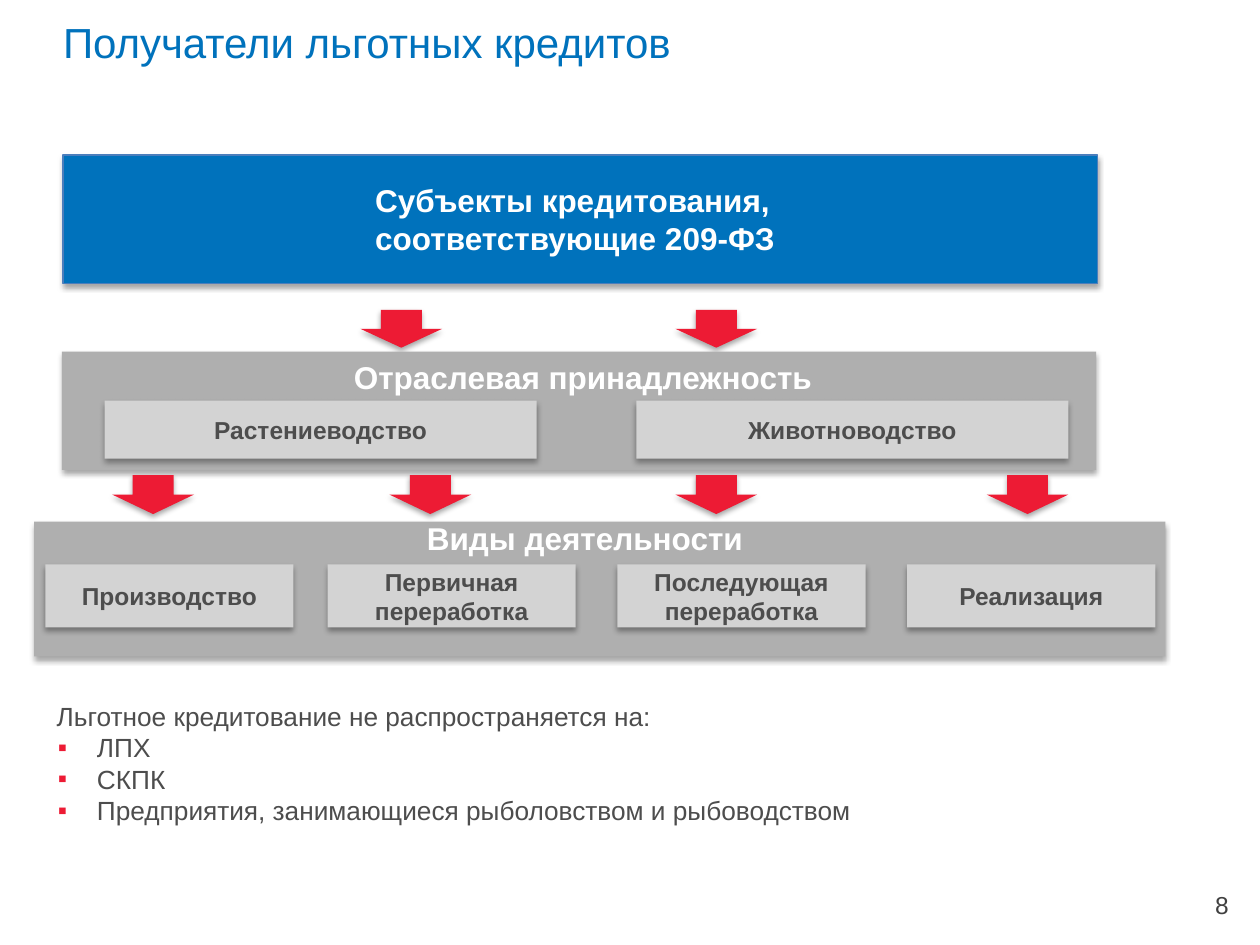
from dataclasses import dataclass

from lxml import etree
from pptx import Presentation, util as u
from pptx.dml.color import RGBColor
from pptx.enum import shapes, text
from pptx.oxml.ns import qn


@dataclass(frozen=True)
class Theme:
    """Colours, type sizes and font of the slide."""
    blue: str = "0072BC"
    edge: str = "4B7EBC"
    red: str = "ED1B34"
    band: str = "AFAFAF"
    card: str = "D3D3D3"
    ink: str = "4D4D4D"
    dark: str = "404040"
    white: str = "FFFFFF"
    font: str = "Arial"
    title: int = 24
    head: int = 18
    body: int = 15
    small: int = 14


T = Theme()
COLS, ROWS = 100, 75
WIDE, HIGH = u.Inches(10), u.Inches(7.5)
RECT = shapes.MSO_SHAPE.RECTANGLE
ARROW = shapes.MSO_SHAPE.DOWN_ARROW
LEFT, MID, RIGHT = text.PP_ALIGN.LEFT, text.PP_ALIGN.CENTER, text.PP_ALIGN.RIGHT
TOP, CORE = text.MSO_ANCHOR.TOP, text.MSO_ANCHOR.MIDDLE


def area(x, y, w, h):
    """Turn grid columns and rows into slide lengths."""
    return (round(x * WIDE / COLS), round(y * HIGH / ROWS),
            round(w * WIDE / COLS), round(h * HIGH / ROWS))


def place(item, *cell):
    """Move a placeholder to a grid cell."""
    item.left, item.top, item.width, item.height = area(*cell)


def pad(frame, side, edge):
    """Set the side and edge insets of a text frame in inches."""
    frame.margin_left = frame.margin_right = u.Inches(side)
    frame.margin_top = frame.margin_bottom = u.Inches(edge)


def write(frame, words, size, color, bold=False, align=LEFT, anchor=TOP):
    """Fill a text frame and format all its runs."""
    frame.text = words
    frame.vertical_anchor = anchor
    for para in frame.paragraphs:
        para.alignment = align
        for run in para.runs:
            font = run.font
            font.name, font.size, font.bold = T.font, u.Pt(size), bold
            font.color.rgb = RGBColor.from_string(color)


def shade(shape):
    """Give a shape a soft shadow that falls straight down."""
    shape.shadow.inherit = False
    glow = etree.SubElement(
        shape._element.spPr.find(qn("a:effectLst")), qn("a:outerShdw"),
        blurRad="40000", dist="23000", dir="5400000", rotWithShape="0")
    tint = etree.SubElement(glow, qn("a:srgbClr"), val="000000")
    etree.SubElement(tint, qn("a:alpha"), val="35000")


def block(slide, kind, cell, fill, edge=None):
    """Add a filled preset shape with a shadow."""
    shape = slide.shapes.add_shape(kind, *area(*cell))
    shape.fill.solid()
    shape.fill.fore_color.rgb = RGBColor.from_string(fill)
    if edge:
        shape.line.color.rgb = RGBColor.from_string(edge)
        shape.line.width = u.Pt(0.75)
    else:
        shape.line.fill.background()
    shade(shape)
    return shape


def card(slide, words, *cell):
    """Add a light card with a centred bold label."""
    frame = block(slide, RECT, cell, T.card).text_frame
    frame.word_wrap = True
    pad(frame, 0, 0.04)
    write(frame, words, T.small, T.ink, True, MID, CORE)


def label(slide, words, *cell):
    """Add a bold white heading that does not wrap."""
    frame = slide.shapes.add_textbox(*area(*cell)).text_frame
    frame.word_wrap = False
    frame.auto_size = text.MSO_AUTO_SIZE.SHAPE_TO_FIT_TEXT
    write(frame, words, T.head, T.white, True)


def arrows(slide, lefts, y, h):
    """Add a row of down arrows."""
    for x in lefts:
        block(slide, ARROW, (x, y, 6.5, h), T.red)


def mark(para, bullet):
    """Set the indent, tab stop and red bullet of a list line."""
    para.space_before = u.Pt(0)
    props = para._p.get_or_add_pPr()
    props.set("marL", str(u.Inches(0.41 if bullet else 0.09)))
    props.set("indent", str(u.Inches(-0.31 if bullet else 0)))
    if bullet:
        tint = etree.SubElement(props, qn("a:buClr"))
        etree.SubElement(tint, qn("a:srgbClr"), val=T.red)
        etree.SubElement(props, qn("a:buFont"), typeface=T.font)
        etree.SubElement(props, qn("a:buChar"), char="▪")
    else:
        etree.SubElement(props, qn("a:buNone"))
    tabs = etree.SubElement(props, qn("a:tabLst"))
    etree.SubElement(tabs, qn("a:tab"), pos=str(u.Inches(0.2)), algn="l")


def notes(body, lines):
    """Write the closing list into the body placeholder."""
    place(body, 3.6, 55.6, 75.8, 9.9)
    frame = body.text_frame
    frame.auto_size = text.MSO_AUTO_SIZE.NONE
    pad(frame, 0, 0.04)
    write(frame, "\n".join(lines), T.body, T.ink, anchor=CORE)
    for i, para in enumerate(frame.paragraphs):
        mark(para, i > 0)


def head(title, words):
    """Write the slide title."""
    place(title, 5, 1.3, 84.4, 9.5)
    frame = title.text_frame
    frame.auto_size = text.MSO_AUTO_SIZE.NONE
    pad(frame, 0, 0)
    write(frame, words, T.title, T.blue)


def number(slide, words):
    """Add the page number at the lower right."""
    frame = slide.shapes.add_textbox(*area(75.2, 69.8, 23.3, 4)).text_frame
    frame.word_wrap = True
    write(frame, words, T.small, T.dark, align=RIGHT, anchor=CORE)


def main():
    """Build the slide and save it."""
    deck = Presentation()
    deck.slide_width, deck.slide_height = WIDE, HIGH
    slide = deck.slides.add_slide(deck.slide_layouts[1])
    head(slide.shapes.title, "Получатели льготных кредитов")
    number(slide, "8")

    block(slide, RECT, (5, 12.3, 82.1, 10.2), T.blue, T.edge)
    label(slide, "Субъекты кредитования,\nсоответствующие 209-ФЗ",
          28.8, 13.9, 34.4, 7.1)
    arrows(slide, (28.6, 53.6), 24.6, 3)

    block(slide, RECT, (4.9, 27.9, 82.1, 9.4), T.band)
    label(slide, "Отраслевая принадлежность", 27.1, 27.9, 38.8, 4)
    for x, words in ((8.3, "Растениеводство"), (50.5, "Животноводство")):
        card(slide, words, x, 31.8, 34.3, 4.6)
    arrows(slide, (8.9, 30.9, 53.6, 78.3), 37.7, 3.1)

    block(slide, RECT, (2.7, 41.4, 89.8, 10.7), T.band)
    label(slide, "Виды деятельности", 32.9, 40.7, 27.4, 4)
    for x, words in ((3.6, "Производство"), (26, "Первичная переработка"),
                     (49, "Последующая переработка"), (72, "Реализация")):
        card(slide, words, x, 44.8, 19.7, 5)

    notes(slide.placeholders[1], (
        "Льготное кредитование не распространяется на:", "ЛПХ", "СКПК",
        "Предприятия, занимающиеся рыболовством и рыбоводством"))
    deck.save("out.pptx")


if __name__ == "__main__":
    main()
